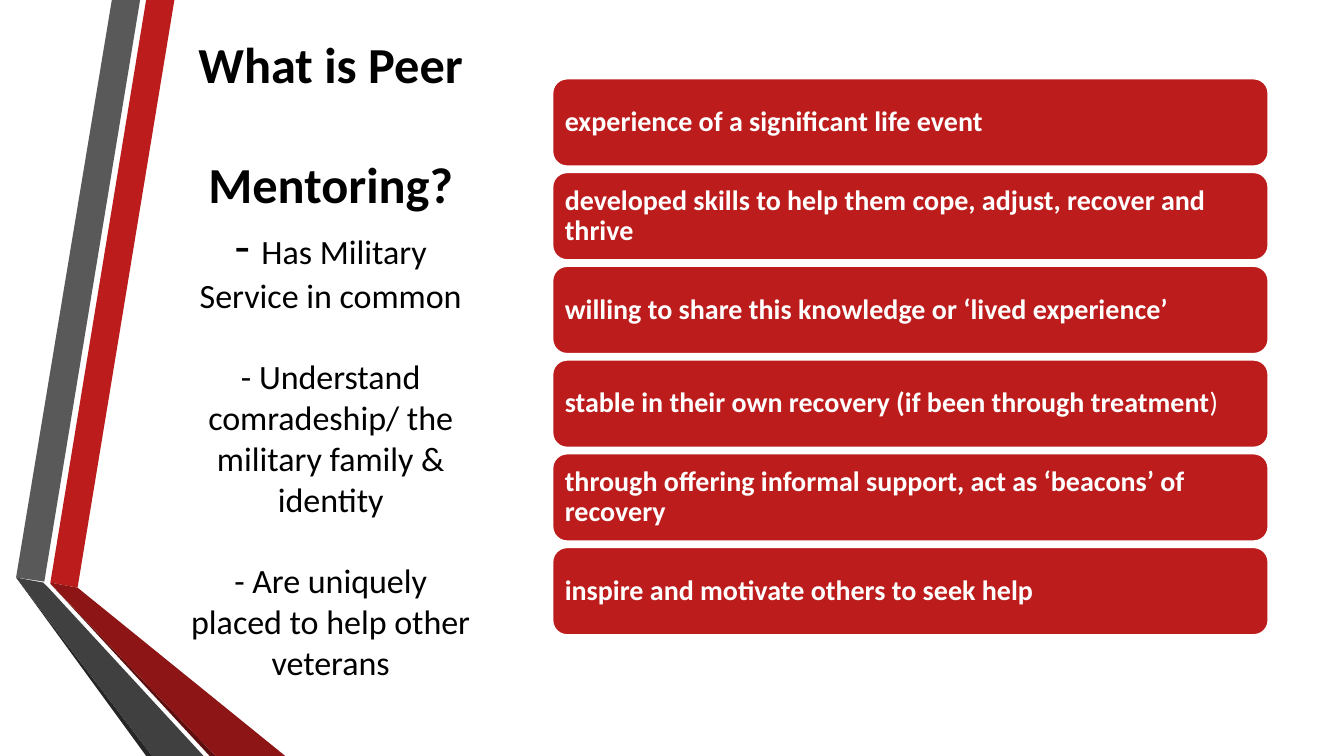
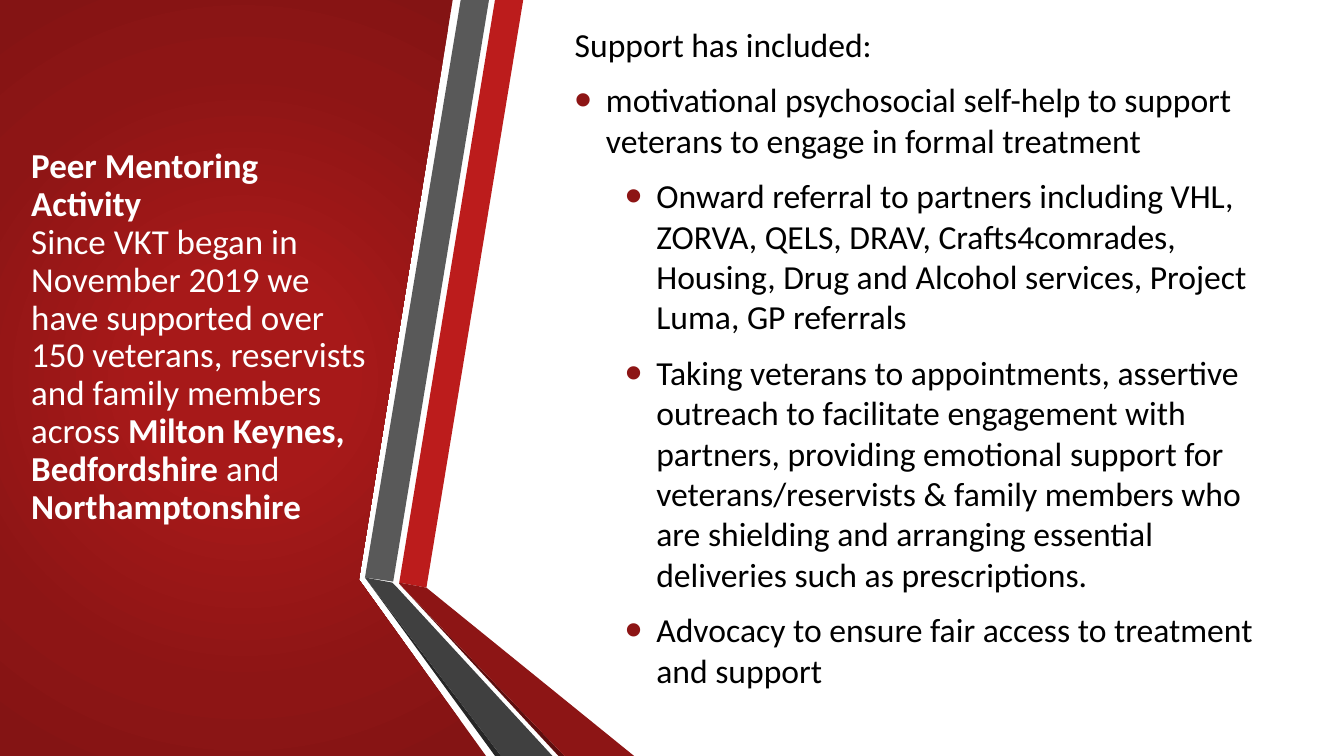
from lxml.etree import SubElement
from pptx import Presentation
from pptx.dml.color import RGBColor
from pptx.enum.shapes import MSO_SHAPE
from pptx.enum.text import MSO_ANCHOR, MSO_AUTO_SIZE, PP_ALIGN
from pptx.oxml import parse_xml
from pptx.oxml.ns import nsdecls, qn
from pptx.util import Inches, Pt

RED, DARK, WHITE, BLACK = "BC1C1C", "8D1515", "FFFFFF", "000000"

# Ribbon strips: fill and outline points in inches
RIBBON = [
    (RED, [(0.5, 5.78), (0.77, 5.83), (1.73, 0), (1.45, 0)]),
    ("595959", [(1.39, 0), (1.11, 0), (0.16, 5.73), (0.44, 5.77)]),
    ("262626", [(0.16, 5.73), (1.45, 7.5), (1.51, 7.5)]),
    ("5E0E0E", [(0.5, 5.79), (2.08, 7.5), (2.14, 7.5)]),
    (DARK, [(0.5, 5.79), (2.14, 7.5), (2.83, 7.5), (0.77, 5.83), (0.5, 5.78)]),
    ("404040", [(2.02, 7.5), (0.48, 5.83), (0.43, 5.78), (0.16, 5.73), (1.51, 7.5)]),
]
PANEL = [(0, 0), (4.49, 0), (3.56, 5.75), (4.82, 7.5), (0, 7.5)]
GLOW = [(0, "A71919"), (23, "A71919"), (69, DARK), (97, "841414")]


def color(code):
    return RGBColor.from_string(code)


class Deck:
    def __init__(self):
        self.prs = Presentation()
        self.prs.slide_width = Inches(13.33)
        self.prs.slide_height = Inches(7.5)

    def page(self, layout):
        self.slide = self.prs.slides.add_slide(self.prs.slide_layouts[layout])

    # Text
    def para(self, frame, first, runs, base, **form):
        par = frame.paragraphs[0] if first else frame.add_paragraph()
        for key, val in form.items():
            setattr(par, key, val)
        for text, extra in runs:
            run = par.add_run()
            run.text = text
            look = {"name": "Calibri", "color": BLACK, "bold": False, **base, **extra}
            run.font.color.rgb = color(look.pop("color"))
            for key, val in look.items():
                setattr(run.font, key, val)
        return par

    def place(self, index, left, top, width, height):
        box = self.slide.placeholders[index]
        spot = {"left": left, "top": top, "width": width, "height": height}
        for key, val in spot.items():
            setattr(box, key, Inches(val))
        box.element.getparent().append(box.element)  # bring to front
        frame = box.text_frame
        frame.word_wrap = True
        frame.auto_size = MSO_AUTO_SIZE.NONE
        frame.vertical_anchor = MSO_ANCHOR.MIDDLE
        return frame

    def bullet(self, par, indent):
        props = par._p.get_or_add_pPr()
        hang = 0.31 if indent else 0
        props.set("marL", str(Inches(indent)))
        props.set("indent", str(-Inches(hang)))
        if not indent:
            SubElement(props, qn("a:buNone"))
            return
        tint = SubElement(props, qn("a:buClr"))
        SubElement(tint, qn("a:srgbClr")).set("val", DARK)
        SubElement(props, qn("a:buSzPct")).set("val", "145000")
        SubElement(props, qn("a:buFont")).set("typeface", "Arial")
        SubElement(props, qn("a:buChar")).set("char", "•")

    # Shapes
    def paint(self, shape, fill):
        shape.shadow.inherit = False
        shape.fill.solid()
        shape.fill.fore_color.rgb = color(fill)
        shape.line.fill.background()

    def free(self, points, fill, shift=0):
        dots = [(Inches(x + shift), Inches(y)) for x, y in points]
        pen = self.slide.shapes.build_freeform(*dots[0], scale=1.0)
        pen.add_line_segments(dots[1:], close=True)
        shape = pen.convert_to_shape()
        self.paint(shape, fill)
        return shape

    def ribbon(self, shift=0):
        for fill, points in RIBBON:
            self.free(points, fill, shift)

    def panel(self):
        shape = self.free(PANEL, DARK)
        stops = "".join(
            f'<a:gs pos="{pos * 1000}"><a:srgbClr val="{code}"/></a:gs>'
            for pos, code in GLOW)
        grad = parse_xml(
            f'<a:gradFill {nsdecls("a")}><a:gsLst>{stops}</a:gsLst>'
            '<a:path path="circle"><a:fillToRect l="50000" t="50000" '
            'r="50000" b="50000"/></a:path></a:gradFill>')
        old = shape.element.spPr.find(qn("a:solidFill"))
        old.getparent().replace(old, grad)

    def bar(self, top, runs):
        shape = self.slide.shapes.add_shape(
            MSO_SHAPE.ROUNDED_RECTANGLE, Inches(5.48), Inches(top),
            Inches(7.1), Inches(0.87))
        self.paint(shape, RED)
        shape.line.color.rgb = color(WHITE)
        shape.line.width = Pt(1.25)
        frame = shape.text_frame
        frame.word_wrap = True
        frame.vertical_anchor = MSO_ANCHOR.MIDDLE
        frame.margin_left = frame.margin_right = Inches(0.08)
        self.para(frame, True, runs, {"size": Pt(20), "color": WHITE, "bold": True},
                  alignment=PP_ALIGN.LEFT, line_spacing=0.9)


def mentor(deck):
    deck.page(5)
    deck.ribbon()
    # Title with three short points
    head = {"size": Pt(36), "bold": True}
    lines = [
        (0, [("What is Peer", head)]),
        (43, [("Mentoring?", head)]),
        (0, [("- ", {"size": Pt(36)}), ("Has Military Service in common", {})]),
        (29, [("- Understand comradeship/ the military family & identity", {})]),
        (29, [("- Are uniquely placed to help other veterans", {})]),
    ]
    frame = deck.place(0, 1.76, 0.09, 3.04, 6.91)
    for i, (gap, runs) in enumerate(lines):
        deck.para(frame, i == 0, runs, {"size": Pt(24.3)},
                  alignment=PP_ALIGN.CENTER, space_before=Pt(gap))
    # Mentor qualities
    bars = [
        [("experience of a significant life event", {})],
        [("developed skills to help them cope, adjust, recover and thrive", {})],
        [("willing to share this knowledge or ‘lived experience’", {})],
        [("stable in their own recovery (if been through treatment", {}),
         (")", {"bold": False})],
        [("through offering informal support, act as ‘beacons’ of recovery", {})],
        [("inspire and motivate others to seek help", {})],
    ]
    for i, runs in enumerate(bars):
        deck.bar(0.78 + 0.93 * i, runs)


def work(deck):
    deck.page(1)
    deck.panel()
    deck.ribbon(3.46)
    # Title on the red panel
    bold = {"bold": True}
    lines = [
        [("Peer Mentoring Activity", bold)],
        [("Since VKT began in November 2019 we have supported over 150 veterans, "
          "reservists and family members across ", {}),
         ("Milton Keynes, Bedfordshire ", bold), ("and ", {}),
         ("Northamptonshire", bold)],
    ]
    frame = deck.place(0, 0.21, 0.56, 3.6, 5.58)
    for i, runs in enumerate(lines):
        deck.para(frame, i == 0, runs, {"size": Pt(25), "color": WHITE},
                  alignment=PP_ALIGN.LEFT, line_spacing=0.9, space_before=Pt(0))
    # Kinds of support: level, indent, text
    items = [
        (0, 0, "Support has included:"),
        (0, 0.31, "motivational psychosocial self-help to support veterans to "
                  "engage in formal treatment"),
        (1, 0.81, "Onward referral to partners including VHL, ZORVA, QELS, DRAV, "
                  "Crafts4comrades, Housing, Drug and Alcohol services, Project "
                  "Luma, GP referrals"),
        (1, 0.81, "Taking veterans to appointments, assertive outreach to "
                  "facilitate engagement with partners, providing emotional "
                  "support for veterans/reservists & family members who are "
                  "shielding and arranging essential deliveries such as "
                  "prescriptions."),
        (1, 0.81, "Advocacy to ensure fair access to treatment and support"),
    ]
    frame = deck.place(1, 5.6, 0.75, 6.98, 5.58)
    for i, (level, indent, text) in enumerate(items):
        par = deck.para(frame, i == 0, [(text, {})], {"size": Pt(24)}, level=level)
        deck.bullet(par, indent)
        form = {"line_spacing": 1.0, "space_before": Pt(5 if i else 0),
                "space_after": Pt(6)}
        for key, val in form.items():
            setattr(par, key, val)


def main():
    deck = Deck()
    mentor(deck)
    work(deck)
    deck.prs.save("out.pptx")


if __name__ == "__main__":
    main()
